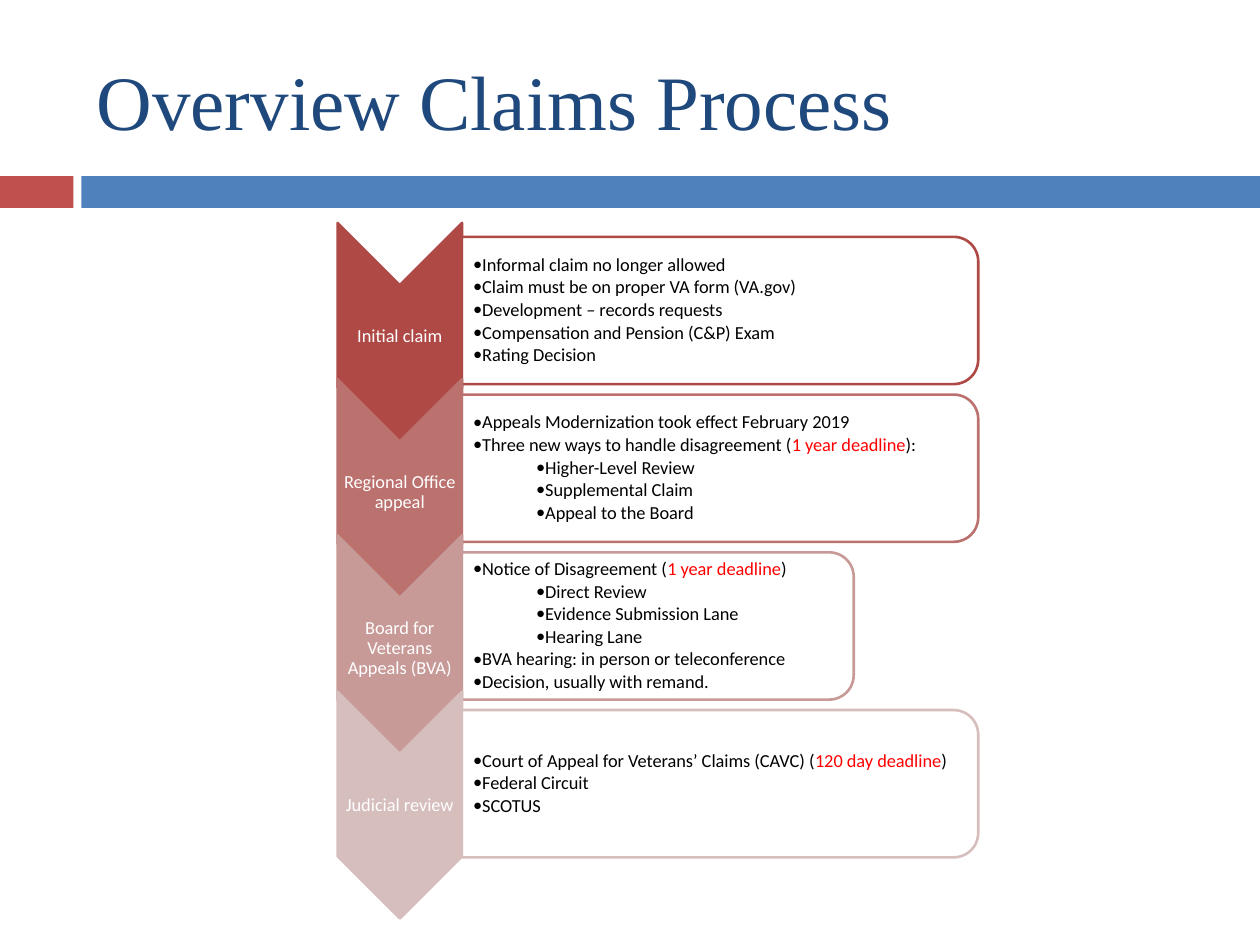
from dataclasses import dataclass

from lxml.etree import SubElement
from pptx import Presentation
from pptx.dml.color import RGBColor
from pptx.enum.shapes import MSO_SHAPE as Form
from pptx.enum.text import MSO_ANCHOR as Anchor, PP_ALIGN as Align
from pptx.oxml.ns import qn
from pptx.util import Cm, Pt

WHITE = RGBColor(0xFF, 0xFF, 0xFF)
BLACK = RGBColor(0x00, 0x00, 0x00)
ALERT = RGBColor(0xFF, 0x00, 0x00)
NAVY = RGBColor(0x1F, 0x49, 0x7D)
BLUE = RGBColor(0x4F, 0x81, 0xBD)
BRICK = RGBColor(0xC0, 0x50, 0x4D)
TONE_1 = RGBColor(0xAE, 0x49, 0x46)
TONE_2 = RGBColor(0xBB, 0x71, 0x6E)
TONE_3 = RGBColor(0xC7, 0x99, 0x97)
TONE_4 = RGBColor(0xD6, 0xBE, 0xBD)

# Sizes in cm: arrows and panels are turned by 90 degrees
ARROW_LONG, ARROW_WIDE = 4.57, 2.51
ARROW_X, ARROW_Y, ARROW_STEP = 8.06, 6.78, 3.15
PANEL_LEFT, PANEL_TALL = 9.31, 2.97
PANEL_Y, PANEL_STEP = 6.26, 3.18
WIDE, SHORT = 10.41, 7.9


@dataclass
class Point:
    text: str  # the part between bars is shown in red
    level: int = 1


@dataclass
class Stage:
    name: str
    tone: RGBColor
    points: list[Point]
    width: float = WIDE


STAGES = [
    Stage("Initial claim", TONE_1, [
        Point("Informal claim no longer allowed"),
        Point("Claim must be on proper VA form (VA.gov)"),
        Point("Development – records requests"),
        Point("Compensation and Pension (C&P) Exam"),
        Point("Rating Decision"),
    ]),
    Stage("Regional Office appeal", TONE_2, [
        Point("Appeals Modernization took effect February 2019"),
        Point("Three new ways to handle disagreement (|1 year deadline|):"),
        Point("Higher-Level Review", 2),
        Point("Supplemental Claim", 2),
        Point("Appeal to the Board", 2),
    ]),
    Stage("Board for Veterans Appeals (BVA)", TONE_3, [
        Point("Notice of Disagreement (|1 year deadline|)"),
        Point("Direct Review", 2),
        Point("Evidence Submission Lane", 2),
        Point("Hearing Lane", 2),
        Point("BVA hearing: in person or teleconference"),
        Point("Decision, usually with remand."),
    ], SHORT),
    Stage("Judicial review", TONE_4, [
        Point("Court of Appeal for Veterans’ Claims (CAVC) (|120 day deadline|)"),
        Point("Federal Circuit"),
        Point("SCOTUS"),
    ]),
]


def style(run, size: float, face: str, color: RGBColor) -> None:
    run.font.size = Pt(size)
    run.font.name = face
    run.font.color.rgb = color


def add_form(slide, form, x: float, y: float, w: float, h: float,
             fill: RGBColor, line: RGBColor | None = None, turn: int = 0):
    """Draw a preset shape around the centre x, y."""
    shape = slide.shapes.add_shape(form, Cm(x - w / 2), Cm(y - h / 2), Cm(w), Cm(h))
    shape.shadow.inherit = False
    shape.rotation = turn
    shape.fill.solid()
    shape.fill.fore_color.rgb = fill
    if line is None:
        shape.line.fill.background()
    else:
        shape.line.color.rgb = line
        shape.line.width = Pt(1.5)
    return shape


def add_frame(slide, x: float, y: float, w: float, h: float,
              left: float = 0.03, edge: float = 0.03):
    """Add a wrapped text frame, centred on y, with its left edge at x."""
    box = slide.shapes.add_textbox(Cm(x), Cm(y - h / 2), Cm(w), Cm(h))
    frame = box.text_frame
    frame.word_wrap = True
    frame.vertical_anchor = Anchor.MIDDLE
    frame.margin_left = Cm(left)
    frame.margin_top = frame.margin_right = frame.margin_bottom = Cm(edge)
    return frame


def add_arrow(slide, stage: Stage, y: float) -> None:
    add_form(slide, Form.CHEVRON, ARROW_X, y, ARROW_LONG, ARROW_WIDE,
             stage.tone, stage.tone, 90)
    frame = add_frame(slide, ARROW_X - ARROW_WIDE / 2, y, ARROW_WIDE, 1.37)
    frame.text = stage.name
    para = frame.paragraphs[0]
    para.alignment = Align.CENTER
    para.line_spacing = 0.9
    style(para.runs[0], 10.5, "Calibri", WHITE)


def add_point(para, point: Point) -> None:
    para.level = point.level
    para.line_spacing = 0.9
    para.space_after = Pt(1.6)
    props = para._p.get_or_add_pPr()
    props.set("marL", str(Cm(0.16 + 1.27 * (point.level - 1))))
    props.set("indent", str(-Cm(0.16)))
    SubElement(props, qn("a:buFont")).set("typeface", "Calibri")
    SubElement(props, qn("a:buChar")).set("char", "•")
    for i, part in enumerate(point.text.split("|")):
        run = para.add_run()
        run.text = part
        style(run, 10.5, "Calibri", ALERT if i % 2 else BLACK)


def add_panel(slide, stage: Stage, y: float) -> None:
    panel = add_form(slide, Form.ROUND_2_SAME_RECTANGLE, PANEL_LEFT + stage.width / 2, y,
                     PANEL_TALL, stage.width, WHITE, stage.tone, 90)
    color = panel.fill._xPr.find(qn("a:solidFill"))[0]
    SubElement(color, qn("a:alpha")).set("val", "90000")
    frame = add_frame(slide, PANEL_LEFT, y, stage.width - 0.13, 2.69, left=0.23)
    for i, point in enumerate(stage.points):
        add_point(frame.add_paragraph() if i else frame.paragraphs[0], point)


def main() -> None:
    deck = Presentation()
    deck.slide_width, deck.slide_height = Cm(25.4), Cm(19.05)
    slide = deck.slides.add_slide(deck.slide_layouts[6])

    # Band under the title
    add_form(slide, Form.RECTANGLE, 0.74, 3.87, 1.48, 0.64, BRICK)
    add_form(slide, Form.RECTANGLE, 13.52, 3.87, 23.76, 0.64, BLUE)

    # Title
    title = add_frame(slide, 1.7, 2.01, 22.66, 2.74, left=0.25, edge=0.13)
    title.text = "Overview Claims Process"
    style(title.paragraphs[0].runs[0], 44, "Times New Roman", NAVY)

    # Stages of the process
    for i, stage in enumerate(STAGES):
        add_arrow(slide, stage, ARROW_Y + i * ARROW_STEP)
        add_panel(slide, stage, PANEL_Y + i * PANEL_STEP)

    deck.save("out.pptx")


if __name__ == "__main__":
    main()
